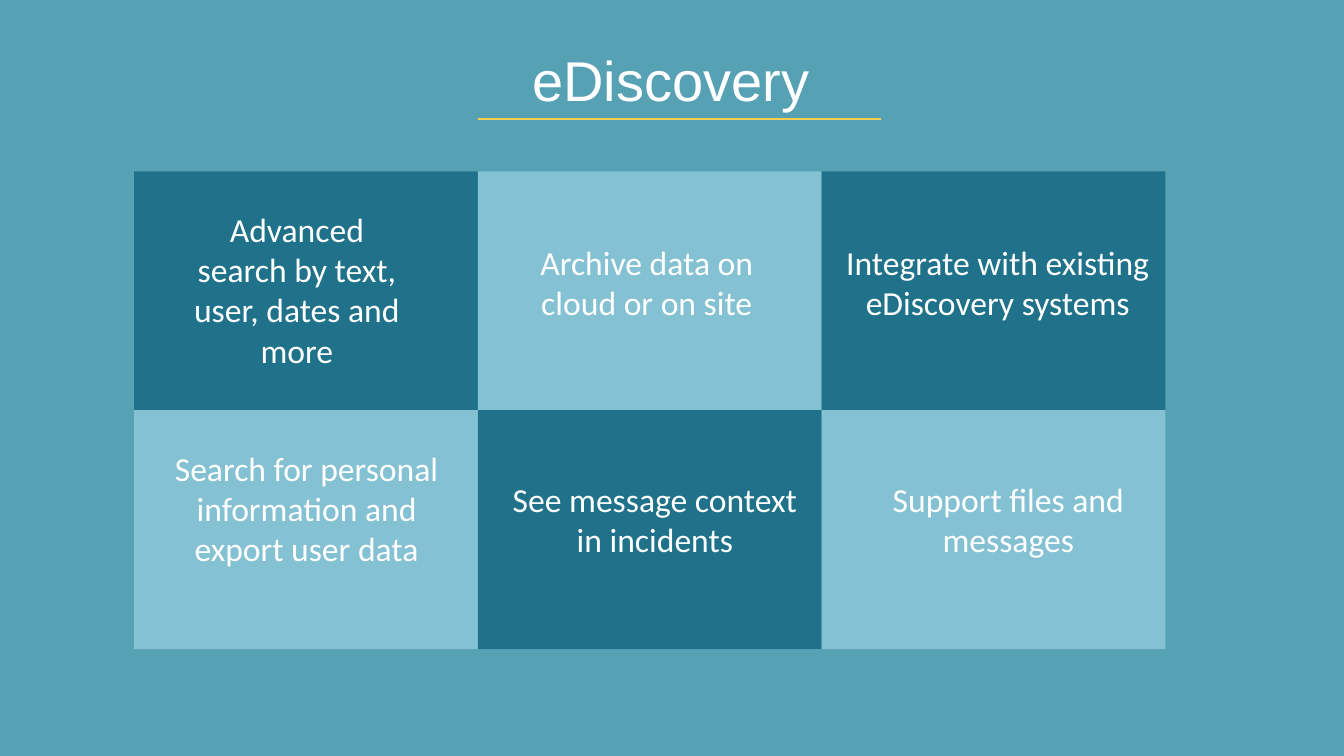
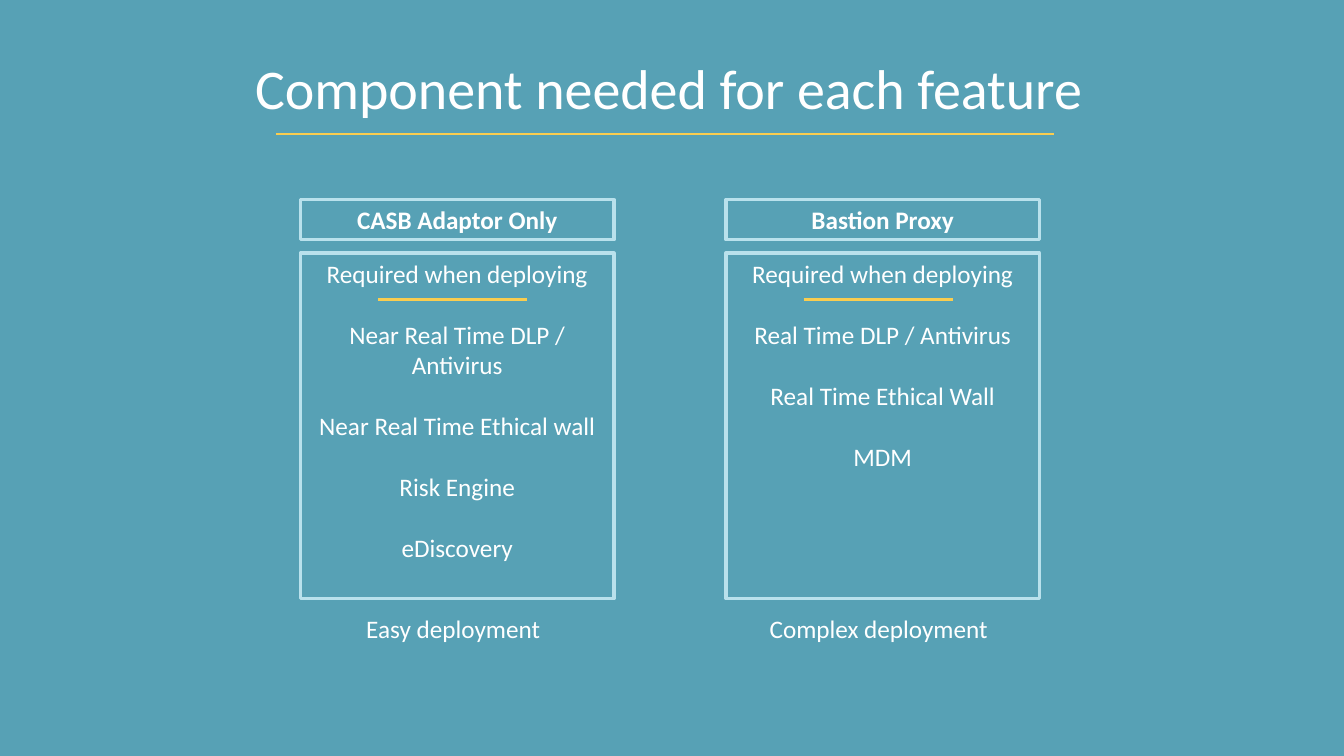
from lxml.etree import SubElement
from pptx import Presentation
from pptx.dml.color import RGBColor
from pptx.enum.shapes import MSO_CONNECTOR, MSO_SHAPE
from pptx.enum.text import MSO_ANCHOR, MSO_AUTO_SIZE, PP_ALIGN
from pptx.oxml.ns import qn
from pptx.util import Pt

PX = 9144
COLORS = {
    "background": "57A1B5",
    "dark": "1F7289",
    "light": "83C1D3",
    "border": "B9E1EC",
    "accent": "FACD4F",
    "text": "FFFFFF",
}
TITLE_ONLY = 5
GRID_LEFT, GRID_TOP = 133, 170
CELL_WIDTH, CELL_HEIGHT = 341, 237
GRID_COLUMNS, GRID_ROWS = 3, 2
LABELS = [
    ("Advanced search by text, user, dates and more", 171, 202, 247, 172),
    ("Archive data on cloud or on site", 518, 235, 247, 91),
    ("Integrate with existing\neDiscovery systems", 824, 235, 331, 91),
    ("Search for personal information and export user data", 158, 439, 292, 131),
    ("See message context\nin incidents", 497, 470, 305, 91),
    ("Support files and\nmessages", 874, 470, 252, 91),
]
PANEL_WIDTH = 311
PANELS = [
    (298, "CASB Adaptor Only", "Easy deployment",
     ["Near Real Time DLP / Antivirus", "Near Real Time Ethical wall",
      "Risk Engine", "eDiscovery"]),
    (720, "Bastion Proxy", "Complex deployment",
     ["Real Time DLP / Antivirus", "Real Time Ethical Wall", "MDM"]),
]


def px(*lengths):
    """Turn pixel lengths into EMU."""
    return [length * PX for length in lengths]


def color(name):
    """Return a palette colour."""
    return RGBColor.from_string(COLORS[name])


def write(shape, lines, size, align=PP_ALIGN.CENTER, font="Calibri", bold=False, gap=0):
    """Write top-anchored paragraphs separated by a gap in points."""
    frame = shape.text_frame
    frame.text = "\n".join(lines)
    frame.word_wrap = True
    frame.auto_size = MSO_AUTO_SIZE.NONE
    frame.vertical_anchor = MSO_ANCHOR.TOP
    for index, paragraph in enumerate(frame.paragraphs):
        paragraph.alignment = align
        paragraph.space_before = Pt(gap if index else 0)
        paragraph.font.name = font
        paragraph.font.size = Pt(size)
        paragraph.font.bold = bold
        paragraph.font.color.rgb = color("text")


def add_label(slide, box, text, size):
    """Add a centred text box."""
    write(slide.shapes.add_textbox(*px(*box)), text.split("\n"), size)


def add_rectangle(slide, box, fill=None, border=None):
    """Add a rectangle that is filled, outlined or both."""
    shape = slide.shapes.add_shape(MSO_SHAPE.RECTANGLE, *px(*box))
    shape.shadow.inherit = False
    if fill:
        shape.fill.solid()
        shape.fill.fore_color.rgb = color(fill)
    else:
        shape.fill.background()
    if border:
        shape.line.color.rgb = color(border)
        shape.line.width = Pt(2.25)
    else:
        shape.line.fill.background()
    return shape


def add_rule(slide, left, right, top):
    """Add a horizontal accent line."""
    rule = slide.shapes.add_connector(
        MSO_CONNECTOR.STRAIGHT, *px(left, top, right, top))
    rule.line.color.rgb = color("accent")
    rule.line.width = Pt(2)
    SubElement(rule._element.spPr, qn("a:effectLst"))


def add_slide(presentation, title, box, rule, font="Calibri"):
    """Add a slide with an underlined title."""
    slide = presentation.slides.add_slide(presentation.slide_layouts[TITLE_ONLY])
    heading = slide.shapes.title
    heading.left, heading.top, heading.width, heading.height = px(*box)
    write(heading, [title], 40, PP_ALIGN.LEFT, font)
    heading.text_frame.word_wrap = False
    add_rule(slide, *rule)
    return slide


def add_checkerboard(slide):
    """Add the grid of cells in alternating colours."""
    for row in range(GRID_ROWS):
        for column in range(GRID_COLUMNS):
            box = (GRID_LEFT + column * CELL_WIDTH, GRID_TOP + row * CELL_HEIGHT,
                   CELL_WIDTH, CELL_HEIGHT)
            add_rectangle(slide, box, fill="light" if (row + column) % 2 else "dark")


def add_panel(slide, left, heading, caption, features):
    """Add a column with a heading, its features and a caption."""
    header = add_rectangle(slide, (left, 198, PANEL_WIDTH, 40), border="border")
    write(header, [heading], 18, bold=True)
    body = add_rectangle(slide, (left, 251, PANEL_WIDTH, 343), border="border")
    write(body, ["Required when deploying", *features], 18, gap=22)
    add_rule(slide, left + 77, left + 225, 297)
    add_label(slide, (left - 4, 604, PANEL_WIDTH, 40), caption, 18)


def main():
    """Build and save the presentation."""
    presentation = Presentation()
    presentation.slide_width, presentation.slide_height = px(1333, 750)
    background = presentation.slide_master.background.fill
    background.solid()
    background.fore_color.rgb = color("background")

    discovery = add_slide(presentation, "eDiscovery", (518, 40, 298, 77),
                          (474, 874, 118), "Arial")
    add_checkerboard(discovery)
    for text, *box in LABELS:
        add_label(discovery, box, text, 24)

    components = add_slide(presentation, "Component needed for each feature",
                           (243, 48, 849, 77), (274, 1045, 133))
    for panel in PANELS:
        add_panel(components, *panel)

    presentation.save("out.pptx")


if __name__ == "__main__":
    main()
